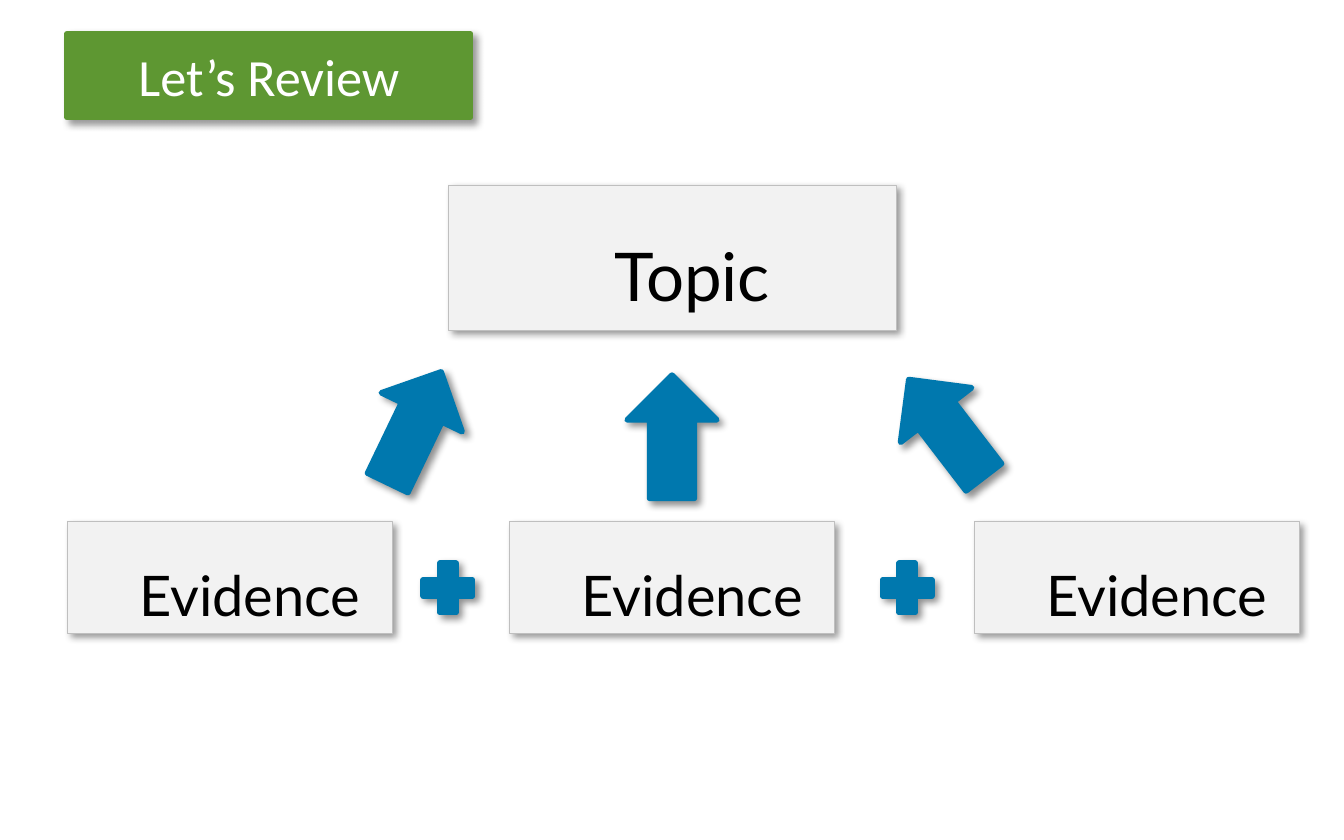
from lxml import etree
from pptx import Presentation
from pptx.dml.color import RGBColor
from pptx.enum.shapes import MSO_SHAPE
from pptx.enum.text import MSO_ANCHOR, PP_ALIGN
from pptx.oxml.ns import qn
from pptx.util import Pt

RECT = MSO_SHAPE.RECTANGLE
ARROW = MSO_SHAPE.UP_ARROW
PLUS = MSO_SHAPE.MATH_PLUS
MIDDLE = MSO_ANCHOR.MIDDLE
CENTER = PP_ALIGN.CENTER

COLORS = {
    "green": "5E9732",
    "blue": "0078AE",
    "panel": "F2F2F2",
    "edge": "BFBFBF",
    "white": "FFFFFF",
    "black": "000000",
}


class Deck:
    def __init__(self, slide):
        self.slide = slide

    def color(self, name):
        return RGBColor.from_string(COLORS[name])

    def shadow(self, shape, alpha):
        shape.shadow.inherit = False
        effects = shape._element.spPr.find(qn("a:effectLst"))
        outer = etree.SubElement(
            effects, qn("a:outerShdw"), blurRad=str(Pt(4)), dist=str(Pt(3)),
            dir=str(45 * 60000), algn="tl", rotWithShape="0")
        tint = etree.SubElement(outer, qn("a:srgbClr"), val=COLORS["black"])
        etree.SubElement(tint, qn("a:alpha"), val=str(alpha * 1000))

    def shape(self, kind, box, fill, edge, width, alpha):
        shape = self.slide.shapes.add_shape(kind, *map(Pt, box))
        shape.fill.solid()
        shape.fill.fore_color.rgb = self.color(fill)
        shape.line.color.rgb = self.color(edge)
        shape.line.width = Pt(width)
        etree.SubElement(shape.line._get_or_add_ln(), qn("a:round"))
        self.shadow(shape, alpha)
        return shape

    def text(self, shape, words, size, font, color):
        frame = shape.text_frame
        frame.word_wrap = True
        frame.vertical_anchor = MIDDLE
        para = frame.paragraphs[0]
        para.alignment = CENTER
        run = para.add_run()
        run.text = words
        run.font.size = Pt(size)
        run.font.name = font
        run.font.color.rgb = self.color(color)

    def title(self, words, box):
        shape = self.shape(RECT, box, "green", "green", 3, 40)
        self.text(shape, words, 28, "Calibri", "white")

    def panel(self, words, box, size):
        shape = self.shape(RECT, box, "panel", "edge", 0.25, 40)
        frame = shape.text_frame
        frame.margin_left, frame.margin_top = Pt(28.8), Pt(21.6)
        frame.margin_right, frame.margin_bottom = Pt(7.2), Pt(3.6)
        self.text(shape, words, size, "Lato", "black")

    def icon(self, kind, box, angle=0):
        shape = self.shape(kind, box, "blue", "blue", 3, 43)
        shape.rotation = angle


def main():
    show = Presentation()
    show.slide_width, show.slide_height = Pt(720), Pt(450)
    deck = Deck(show.slides.add_slide(show.slide_layouts[6]))

    deck.title("Let’s Review", (36, 18, 216, 45))
    deck.panel("Topic", (240, 99, 240, 78), 36)
    for left in (36, 273, 522):
        deck.panel("Evidence", (left, 279, 174, 60), 30)
    for left, top, angle in ((198, 196, 25.7), (483, 196.5, 322.5), (336, 201, 0)):
        deck.icon(ARROW, (left, top, 48, 66), angle)
    for left in (222, 468):
        deck.icon(PLUS, (left, 297, 36, 36))

    show.save("out.pptx")


if __name__ == "__main__":
    main()
